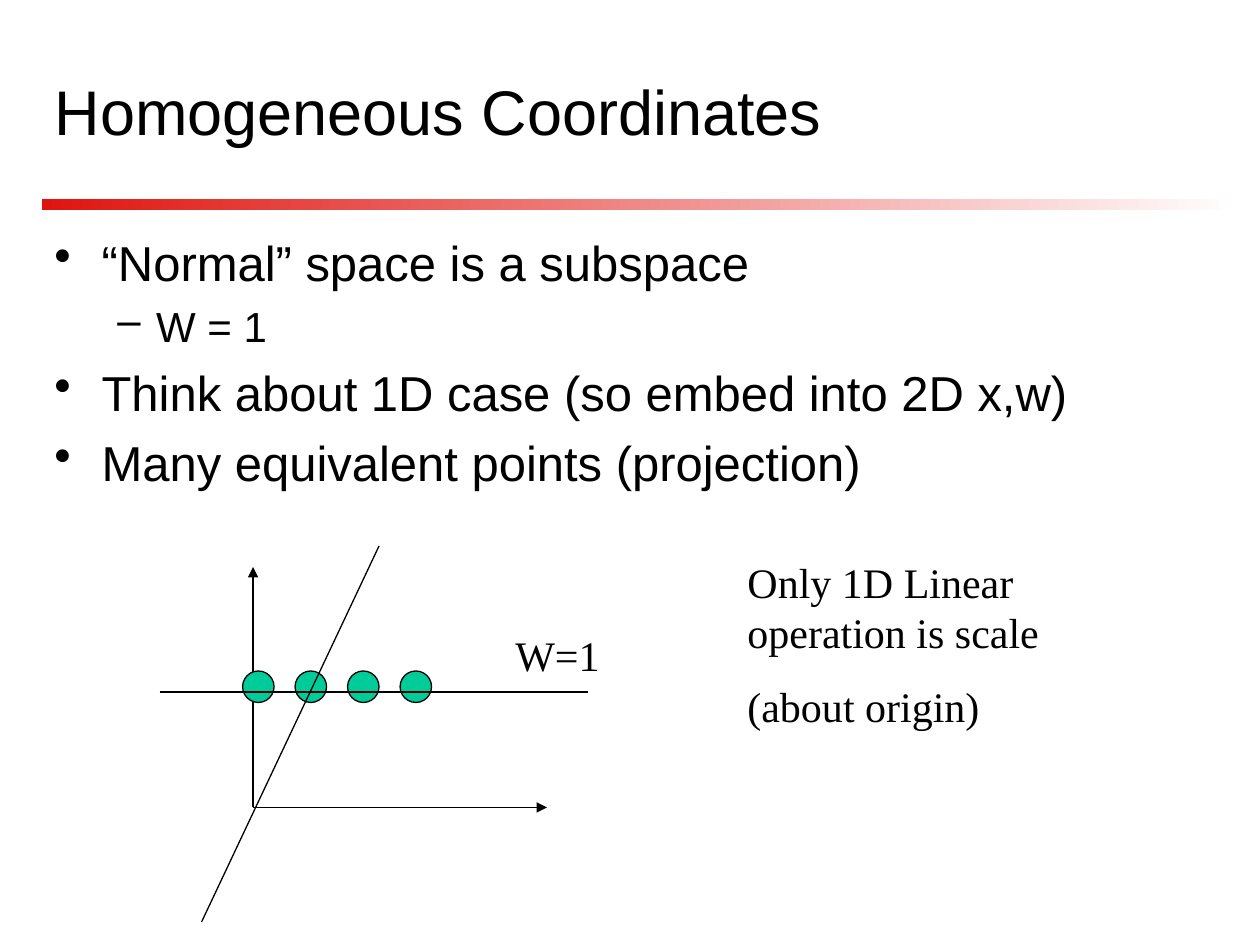
from lxml import etree
from pptx import Presentation
from pptx.dml.color import RGBColor
from pptx.enum.shapes import MSO_CONNECTOR, MSO_SHAPE
from pptx.enum.text import MSO_ANCHOR, MSO_AUTO_SIZE, PP_ALIGN
from pptx.oxml.ns import qn
from pptx.util import Pt

PX = 7620
BLACK = RGBColor(0x00, 0x00, 0x00)
WHITE = RGBColor(0xFF, 0xFF, 0xFF)
RED = RGBColor(0xDF, 0x14, 0x0F)
GREEN = RGBColor(0x00, 0xCC, 0x99)
RECT, OVAL = MSO_SHAPE.RECTANGLE, MSO_SHAPE.OVAL
STRAIGHT = MSO_CONNECTOR.STRAIGHT
MIDDLE, LEFT = MSO_ANCHOR.MIDDLE, PP_ALIGN.LEFT
GROW, NO_FIT = MSO_AUTO_SIZE.SHAPE_TO_FIT_TEXT, MSO_AUTO_SIZE.NONE

BULLETS = [
    (0, "“Normal” space is a subspace"),
    (1, "W = 1"),
    (0, "Think about 1D case (so embed into 2D x,w)"),
    (0, "Many equivalent points (projection)"),
]
LEVELS = [("•", 45, -45, 28, 6.5), ("–", 97, -37, 24, 5.5)]


def px(*values):
    return [v * PX for v in values]


def style(p, font, size):
    p.alignment = LEFT
    for r in p.runs:
        r.font.name = font
        r.font.size = Pt(size)
        r.font.color.rgb = BLACK


def add_line(slide, x1, y1, x2, y2, arrow=False):
    line = slide.shapes.add_connector(STRAIGHT, *px(x1, y1, x2, y2))
    line.line.color.rgb = BLACK
    line.line.width = Pt(0.75)
    if arrow:
        ln = line.line._get_or_add_ln()
        etree.SubElement(ln, qn("a:tailEnd"), type="triangle")
    etree.SubElement(line._element.spPr, qn("a:effectLst"))


def add_text(slide, x, y, w, h, paragraphs, space=0, top=6, wrap=True):
    tf = slide.shapes.add_textbox(*px(x, y, w, h)).text_frame
    tf.word_wrap = wrap
    tf.auto_size = GROW
    tf.margin_top = top * PX
    for i, text in enumerate(paragraphs):
        p = tf.add_paragraph() if i else tf.paragraphs[0]
        p.text = text
        if i:
            p.space_before = Pt(space)
        style(p, "Times New Roman", 24)


def add_header(slide, x, y, w, h):
    sp = slide.shapes.title
    sp.left, sp.top, sp.width, sp.height = px(x, y, w - 140, h - 30)
    tf = sp.text_frame
    tf.text = "Homogeneous Coordinates"
    tf.vertical_anchor = MIDDLE
    tf.auto_size = NO_FIT
    style(tf.paragraphs[0], "Arial", 36)

    bar = slide.shapes.add_shape(RECT, *px(x, y + h - 10, w, 10))
    bar.shadow.inherit = False
    bar.line.fill.background()
    bar.fill.gradient()
    bar.fill.gradient_angle = 0
    for stop, color in zip(bar.fill.gradient_stops, (RED, WHITE)):
        stop.color.rgb = color


def add_bullets(slide, x, y, w, h):
    tf = slide.shapes.add_textbox(*px(x, y, w, h)).text_frame
    tf.word_wrap = True
    tf.margin_top = 11 * PX
    for i, (level, text) in enumerate(BULLETS):
        char, margin, indent, size, space = LEVELS[level]
        p = tf.add_paragraph() if i else tf.paragraphs[0]
        p.text = text
        p.level = level
        if i:
            p.space_before = Pt(space)
        pPr = p._p.get_or_add_pPr()
        pPr.set("marL", str(margin * PX))
        pPr.set("indent", str(indent * PX))
        etree.SubElement(pPr, qn("a:buChar"), char=char)
        style(p, "Arial", size)


def add_diagram(slide, x, y, w, h):
    ox, oy = x + 89, y + 249
    add_line(slide, ox, oy, ox, y + 20, arrow=True)
    add_line(slide, ox, oy, ox + 280, oy, arrow=True)
    for i in range(4):
        dot = slide.shapes.add_shape(OVAL, *px(x + 79 + 50 * i, y + 119, 30, 30))
        dot.shadow.inherit = False
        dot.fill.solid()
        dot.fill.fore_color.rgb = GREEN
        dot.line.color.rgb = BLACK
        dot.line.width = Pt(0.75)
    add_line(slide, x, y + 139, x + 408, y + 139)
    add_text(slide, x + 327, y + 74, 104, 60, ["W=1"], wrap=False)
    add_line(slide, x + 40, y + h, x + 209, y)


def main():
    prs = Presentation()
    prs.slide_width, prs.slide_height = px(1200, 900)
    slide = prs.slides.add_slide(prs.slide_layouts[5])
    add_header(slide, 40, 40, 1140, 160)
    add_bullets(slide, 40, 210, 1130, 289)
    add_diagram(slide, 152, 520, 431, 358)
    add_text(slide, 700, 520, 419, 180,
             ["Only 1D Linear operation is scale", "(about origin)"],
             space=13, top=10)
    prs.save("out.pptx")


if __name__ == "__main__":
    main()
